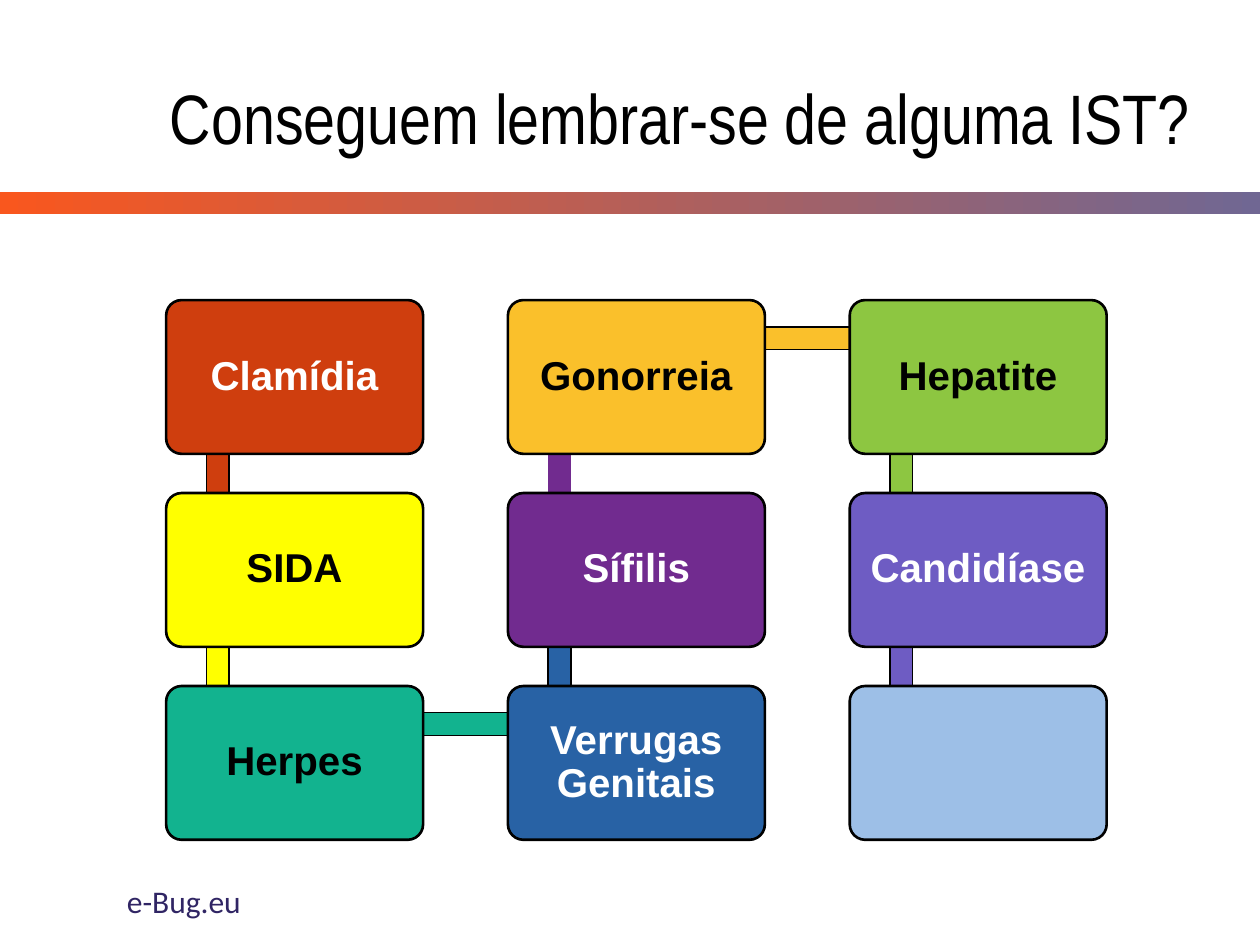
import pptx
import pptx.util
import pptx.dml.color
import pptx.enum.shapes
import pptx.enum.text

Cm = pptx.util.Cm
Pt = pptx.util.Pt
KIND = pptx.enum.shapes.MSO_SHAPE
ALIGN = pptx.enum.text.PP_ALIGN
ANCHOR = pptx.enum.text.MSO_ANCHOR

HUES = {
    "black": "000000", "white": "FFFFFF", "navy": "302564",
    "red": "CF3E0E", "yellow": "FFFF00", "teal": "12B38F",
    "blue": "2862A5", "purple": "712B8F", "amber": "FAC02B",
    "green": "8DC641", "violet": "6E5CC3", "sky": "9DBFE7",
    "slate": "706793", "orange": "F9571E",
}

STEPS = [
    ("Clamídia", 0, 0, "red", "white"),
    ("SIDA", 0, 1, "yellow", "black"),
    ("Herpes", 0, 2, "teal", "black"),
    ("Verrugas Genitais", 1, 2, "blue", "white"),
    ("Sífilis", 1, 1, "purple", "white"),
    ("Gonorreia", 1, 0, "amber", "black"),
    ("Hepatite", 2, 0, "green", "black"),
    ("Candidíase", 2, 1, "violet", "white"),
    ("", 2, 2, "sky", "black"),
]

LEFT, TOP = 3.35, 6.05
WIDE, HIGH = 5.18, 3.1
COL_GAP, ROW_GAP = 6.89, 3.89
LINK_X, LINK_Y, THICK = 1.04, 0.77, 0.46


def rgb(name):
    return pptx.dml.color.RGBColor.from_string(HUES[name])


def style(para, face, size, hue, bold=False):
    for run in para.runs:
        run.font.name = face
        run.font.size = Pt(size)
        run.font.bold = bold
        run.font.color.rgb = rgb(hue)


def block(slide, kind, x, y, wide, high, hue=None, edge=0):
    shape = slide.shapes.add_shape(kind, Cm(x), Cm(y), Cm(wide), Cm(high))
    shape.shadow.inherit = False
    if hue:
        shape.fill.solid()
        shape.fill.fore_color.rgb = rgb(hue)
    if edge:
        shape.line.color.rgb = rgb("black")
        shape.line.width = Pt(edge)
    else:
        shape.line.fill.background()
    return shape


def place(col, row):
    return LEFT + col * COL_GAP, TOP + row * ROW_GAP


def add_link(slide, start, end, hue):
    (x1, y1), (x2, y2) = place(*start), place(*end)
    wide = abs(x2 - x1) or THICK
    high = abs(y2 - y1) or THICK
    x = (x1 + x2 - wide) / 2 + LINK_X
    y = (y1 + y2 - high) / 2 + LINK_Y
    edge = 0 if hue == "purple" else 0.75
    block(slide, KIND.RECTANGLE, x, y, wide, high, hue, edge)


def add_card(slide, text, col, row, hue, ink):
    x, y = place(col, row)
    card = block(slide, KIND.ROUNDED_RECTANGLE, x, y, WIDE, HIGH, hue, 1.5)
    card.adjustments[0] = 0.1
    if not text:
        return
    frame = card.text_frame
    frame.text = text
    frame.word_wrap = True
    frame.vertical_anchor = ANCHOR.MIDDLE
    frame.margin_left = frame.margin_right = Cm(0.2)
    frame.margin_top = frame.margin_bottom = Cm(0.2)
    para = frame.paragraphs[0]
    para.alignment = ALIGN.CENTER
    para.line_spacing = 0.9
    style(para, "Arial", 23, ink, True)


def add_chain(slide):
    for step, after in zip(STEPS, STEPS[1:] + [None]):
        if after:
            add_link(slide, step[1:3], after[1:3], step[3])
        add_card(slide, *step)


def add_title(slide, text):
    title = slide.shapes.title
    title.left, title.top = Cm(2.24), Cm(0.62)
    title.width, title.height = Cm(22), Cm(3.68)
    frame = title.text_frame
    frame.text = text
    frame.word_wrap = True
    frame.auto_size = pptx.enum.text.MSO_AUTO_SIZE.NONE
    frame.vertical_anchor = ANCHOR.MIDDLE
    para = frame.paragraphs[0]
    para.alignment = ALIGN.RIGHT
    para.line_spacing = 0.9
    style(para, "Arial Narrow", 40, "black")


def add_foot(slide, text):
    box = slide.shapes.add_textbox(Cm(2.31), Cm(17.65), Cm(8.59), Cm(1.02))
    box.text_frame.word_wrap = True
    box.text_frame.text = text
    style(box.text_frame.paragraphs[0], "Calibri", 18, "navy")


def add_band(slide):
    band = block(slide, KIND.RECTANGLE, 0, 3.88, 25.4, 0.44)
    band.fill.gradient()
    band.fill.gradient_angle = 180
    for stop, hue, spot in zip(band.fill.gradient_stops, ("slate", "orange"), (0, 1)):
        stop.color.rgb = rgb(hue)
        stop.position = spot


def main():
    deck = pptx.Presentation()
    deck.slide_width, deck.slide_height = Cm(25.4), Cm(19.05)
    slide = deck.slides.add_slide(deck.slide_layouts[5])
    add_title(slide, "Conseguem lembrar-se de alguma IST?")
    add_foot(slide, "e-Bug.eu")
    add_chain(slide)
    add_band(slide)
    deck.save("out.pptx")


if __name__ == "__main__":
    main()
